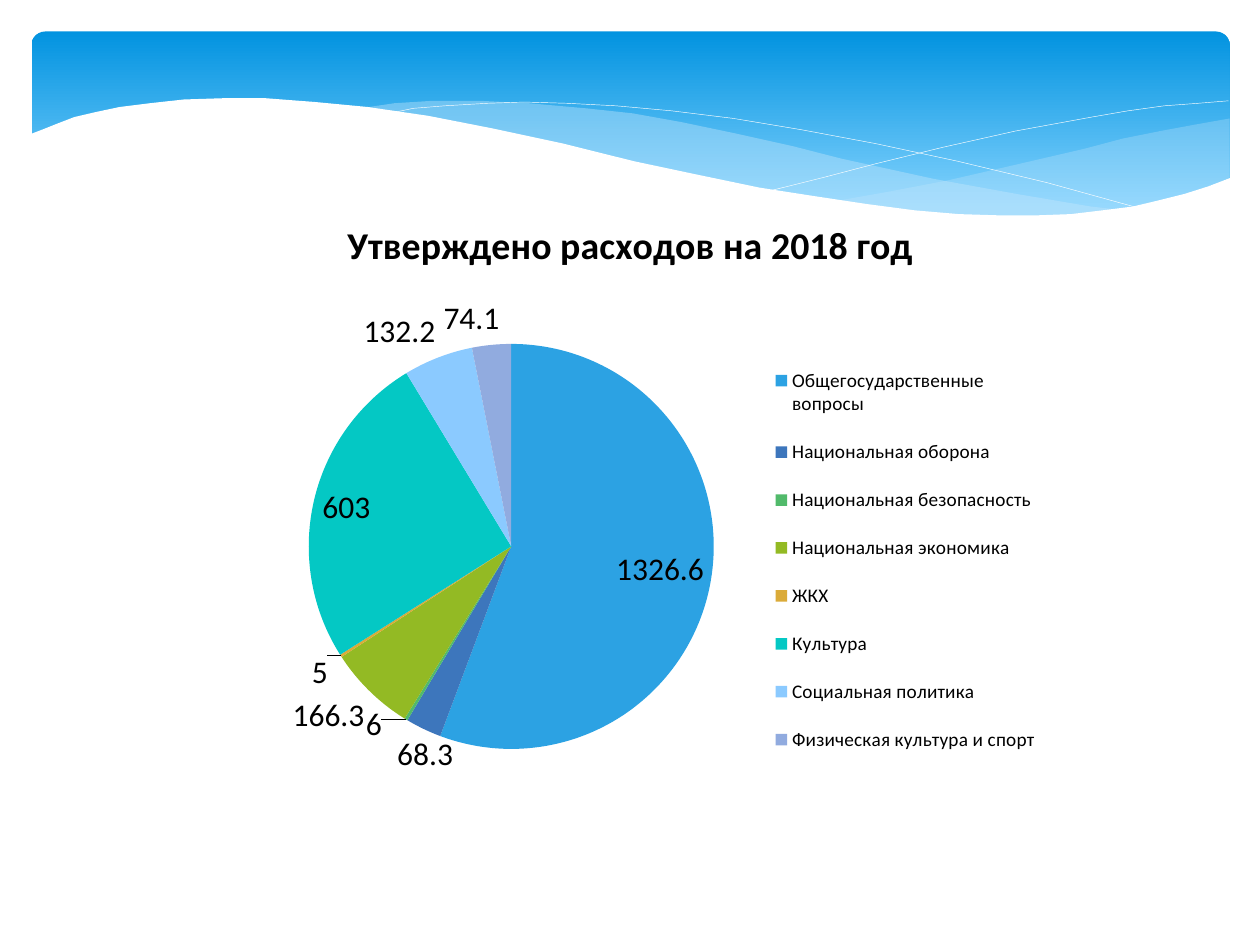
"""Build a slide with a wave banner and a pie chart of approved expenses."""
from lxml import etree
from pptx import Presentation
from pptx.chart.data import CategoryChartData
from pptx.dml.color import RGBColor
from pptx.enum.chart import XL_CHART_TYPE, XL_LABEL_POSITION, XL_LEGEND_POSITION
from pptx.enum.shapes import MSO_SHAPE
from pptx.oxml import parse_xml
from pptx.oxml.ns import nsdecls, qn
from pptx.util import Inches, Pt

WHITE = RGBColor(0xFF, 0xFF, 0xFF)
BLACK = RGBColor(0x00, 0x00, 0x00)
BANNER_TOP = RGBColor(0x02, 0x93, 0xE0)
BANNER_BOTTOM = RGBColor(0x83, 0xD3, 0xFE)
PALE_BLUE = RGBColor(0xC6, 0xE7, 0xFC)
FONT = "Calibri"

TITLE = "Утверждено расходов на 2018 год"
EXPENSES = [
    ("Общегосударственные вопросы", 1326.6, RGBColor(0x2C, 0xA2, 0xE3)),
    ("Национальная оборона", 68.3, RGBColor(0x3D, 0x76, 0xBC)),
    ("Национальная безопасность", 6, RGBColor(0x51, 0xBA, 0x6B)),
    ("Национальная экономика", 166.3, RGBColor(0x93, 0xBA, 0x24)),
    ("ЖКХ", 5, RGBColor(0xDB, 0xAB, 0x39)),
    ("Культура", 603, RGBColor(0x04, 0xC8, 0xC4)),
    ("Социальная политика", 132.2, RGBColor(0x8B, 0xCA, 0xFF)),
    ("Физическая культура и спорт", 74.1, RGBColor(0x91, 0xAB, 0xDF)),
]

RIGHT_WAVE = [
    (9.76, 0.94), (9.48, 0.99), (9.21, 1.04), (8.91, 1.1), (8.61, 1.18), (8.05, 1.31),
    (7.53, 1.43), (7.06, 1.52), (6.61, 1.6), (7.05, 1.65), (7.45, 1.69), (7.81, 1.72),
    (8.14, 1.72), (8.44, 1.71), (8.72, 1.69), (8.97, 1.65), (9.21, 1.6), (9.49, 1.52),
    (9.76, 1.41),
]
LEFT_WAVE = [
    (8.93, 1.67), (8.66, 1.64), (8.07, 1.54), (7.41, 1.42), (6.68, 1.26), (6.29, 1.16),
    (5.84, 1.06), (5.41, 0.97), (5.02, 0.9), (4.65, 0.86), (4.2, 0.82), (3.8, 0.8),
    (3.44, 0.8), (3.13, 0.82), (2.86, 0.86), (3.23, 0.9), (3.62, 0.97), (4.04, 1.06),
    (4.49, 1.16), (5.3, 1.35), (5.84, 1.46), (6.34, 1.56), (6.8, 1.63), (7.22, 1.68),
    (7.61, 1.71), (7.96, 1.73), (8.28, 1.73), (8.57, 1.71), (8.93, 1.67),
]
FALLING_LINE = [
    (3.09, 0.9), (3.28, 0.86), (3.53, 0.84), (3.87, 0.82), (4.16, 0.81), (4.5, 0.82),
    (4.89, 0.84), (5.33, 0.88), (5.82, 0.94), (6.36, 1.03), (6.95, 1.14), (7.6, 1.28),
    (8.31, 1.45), (9.07, 1.66),
]
RISING_LINE = [
    (6.13, 1.51), (6.53, 1.41), (6.95, 1.3), (7.48, 1.17), (8.06, 1.04), (8.66, 0.93),
    (8.95, 0.88), (9.24, 0.84), (9.51, 0.82), (9.75, 0.8),
]
WHITE_WAVE = [
    (9.77, 1.41), (9.59, 1.48), (9.4, 1.54), (9.2, 1.59), (8.99, 1.64), (8.75, 1.67),
    (8.5, 1.7), (8.23, 1.71), (7.93, 1.71), (7.61, 1.7), (7.26, 1.67), (6.88, 1.62),
    (6.48, 1.56), (6.03, 1.49), (5.55, 1.39), (5.03, 1.28), (4.47, 1.14), (3.91, 1.02),
    (3.4, 0.92), (2.92, 0.85), (2.5, 0.81), (2.11, 0.78), (1.77, 0.78), (1.46, 0.79),
    (1.19, 0.82), (0.95, 0.85), (0.76, 0.89), (0.59, 0.93), (0.46, 0.98), (0.36, 1.02),
    (0.23, 1.07), (0.23, 2.24), (9.77, 2.24),
]
WAVES = [
    dict(points=RIGHT_WAVE, fill=PALE_BLUE, opacity=29),
    dict(points=LEFT_WAVE, fill=PALE_BLUE, opacity=40),
    dict(points=FALLING_LINE, line=WHITE),
    dict(points=RISING_LINE, line=WHITE),
    dict(points=WHITE_WAVE, fill=WHITE),
]
CHART_BOX = (1.67, 1.53, 6.67, 4.82)
PLOT_SHARE = (0.117, 0.249, 0.482, 0.667)
LEGEND_SHARE = (0.667, 0.25, 0.32, 0.71)


def add_banner(slide):
    banner = slide.shapes.add_shape(
        MSO_SHAPE.ROUNDED_RECTANGLE, *map(Inches, (0.25, 0.25, 9.51, 1.56)))
    banner.adjustments[0] = 0.07
    banner.shadow.inherit = False
    banner.line.fill.background()
    banner.fill.gradient()
    banner.fill.gradient_angle = 270
    stops = [(0, BANNER_TOP), (0.9, BANNER_BOTTOM)]
    for stop, (position, color) in zip(banner.fill.gradient_stops, stops):
        stop.position = position
        stop.color.rgb = color


def add_wave(slide, points, fill=None, opacity=100, line=None):
    corners = [(Inches(x), Inches(y)) for x, y in points]
    builder = slide.shapes.build_freeform(*corners[0])
    builder.add_line_segments(corners[1:], close=fill is not None)
    shape = builder.convert_to_shape()
    shape.shadow.inherit = False
    if fill is None:
        shape.fill.background()
        shape.line.color.rgb = line
        shape.line.width = Pt(0.25)
        return
    shape.line.fill.background()
    shape.fill.solid()
    shape.fill.fore_color.rgb = fill
    if opacity < 100:
        color = shape._element.spPr.find(qn("a:solidFill")).find(qn("a:srgbClr"))
        etree.SubElement(color, qn("a:alpha"), val=str(opacity * 1000))


def format_font(font, size, bold=False, color=BLACK):
    font.name = FONT
    font.size = Pt(size)
    font.bold = bold
    font.color.rgb = color


def write_text(frame, text, **font_format):
    run = frame.paragraphs[0].add_run()
    run.text = text
    format_font(run.font, **font_format)


def manual_layout(share, inner=False):
    target = '<c:layoutTarget val="inner"/>' if inner else ""
    modes = '<c:xMode val="edge"/><c:yMode val="edge"/>'
    sizes = "".join(f'<c:{name} val="{value}"/>' for name, value in zip("xywh", share))
    return parse_xml(f'<c:layout {nsdecls("c")}><c:manualLayout>{target}{modes}{sizes}'
                     "</c:manualLayout></c:layout>")


def place_part(element, layout, index):
    for existing in element.findall(qn("c:layout")):
        element.remove(existing)
    element.insert(index, layout)


def add_expense_chart(slide):
    names, values, colors = zip(*EXPENSES)
    data = CategoryChartData()
    data.categories = names
    data.add_series("Series 1", values)
    chart = slide.shapes.add_chart(
        XL_CHART_TYPE.PIE, *map(Inches, CHART_BOX), data).chart
    format_font(chart.font, 18)
    chart.has_title = True
    write_text(chart.chart_title.text_frame, TITLE, size=21.6, bold=True)
    chart.chart_title.include_in_layout = False

    chart.has_legend = True
    chart.legend.position = XL_LEGEND_POSITION.RIGHT
    chart.legend.include_in_layout = False
    format_font(chart.legend.font, 11)
    place_part(chart.legend._element, manual_layout(LEGEND_SHARE), 1)

    plot = chart.plots[0]
    place_part(plot._element.getparent(), manual_layout(PLOT_SHARE, inner=True), 0)
    plot.vary_by_categories = True
    series = plot.series[0]
    for index, color in enumerate(colors):
        fill = series.points[index].format.fill
        fill.solid()
        fill.fore_color.rgb = color
    labels = series.data_labels
    labels.show_value = True
    labels.position = XL_LABEL_POSITION.BEST_FIT
    format_font(labels.font, 18)


def main():
    presentation = Presentation()
    presentation.slide_width, presentation.slide_height = Inches(10), Inches(7.5)
    slide = presentation.slides.add_slide(presentation.slide_layouts[6])
    add_banner(slide)
    for wave in WAVES:
        add_wave(slide, **wave)
    add_expense_chart(slide)
    presentation.save("out.pptx")


if __name__ == "__main__":
    main()
